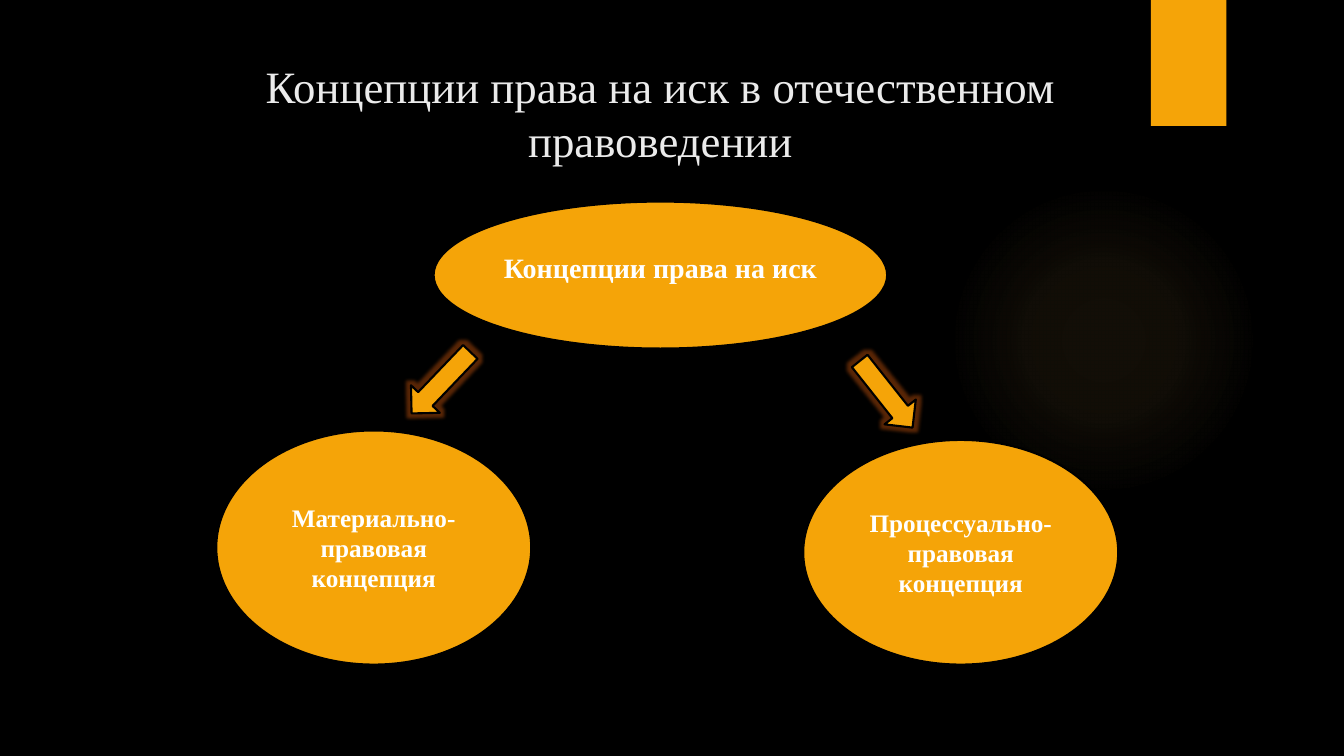
from lxml import etree
from pptx import Presentation
from pptx.dml.color import RGBColor
from pptx.enum.shapes import MSO_SHAPE
from pptx.enum.text import MSO_ANCHOR, MSO_AUTO_SIZE, PP_ALIGN
from pptx.oxml import parse_xml
from pptx.oxml.ns import qn
from pptx.util import Pt

ELLIPSE, RECT, ARROW = MSO_SHAPE.OVAL, MSO_SHAPE.RECTANGLE, MSO_SHAPE.DOWN_ARROW
TOP, MIDDLE = MSO_ANCHOR.TOP, MSO_ANCHOR.MIDDLE
CENTER, NO_FIT = PP_ALIGN.CENTER, MSO_AUTO_SIZE.NONE
EMU_PER_PX = 9525
TITLE_ONLY = 5
DRAWING_NS = "http://schemas.openxmlformats.org/drawingml/2006/main"


def px(*lengths):
    return [n * EMU_PER_PX for n in lengths]


def rgb(value):
    return RGBColor.from_string(value)


class ConceptSlide:
    font = "Times New Roman"
    black, white, pale = "000000", "FFFFFF", "EBEBEB"
    amber, light_amber, ember = "F5A408", "FAC96A", "E06010"

    def __init__(self, prs):
        self.s = prs.slides.add_slide(prs.slide_layouts[TITLE_ONLY])
        self.s.background.fill.solid()
        self.s.background.fill.fore_color.rgb = rgb(self.black)

    def set_text(self, sp, text, size, color, bold, anchor, wrap=True):
        tf = sp.text_frame
        tf.text = text
        tf.word_wrap = wrap
        tf.auto_size = NO_FIT
        tf.vertical_anchor = anchor
        p = tf.paragraphs[0]
        p.alignment = CENTER
        font = p.runs[0].font
        font.name, font.size, font.bold = self.font, Pt(size), bold
        font.color.rgb = rgb(color)

    def title(self, text, box):
        sp = self.s.shapes.title
        sp.left, sp.top, sp.width, sp.height = px(*box)
        self.set_text(sp, text, 32, self.pale, False, TOP)

    def label(self, text, box):
        sp = self.s.shapes.add_textbox(*px(*box))
        self.set_text(sp, text, 20, self.white, True, TOP, wrap=False)

    def shape(self, kind, box, outlined=True):
        sp = self.s.shapes.add_shape(kind, *px(*box))
        sp.shadow.inherit = False
        sp.fill.solid()
        sp.fill.fore_color.rgb = rgb(self.amber)
        if outlined:
            sp.line.color.rgb = rgb(self.black)
            sp.line.width = Pt(1.5)
        else:
            sp.line.fill.background()
        return sp

    def concept(self, text, box):
        self.set_text(self.shape(ELLIPSE, box), text, 18, self.white, True, MIDDLE)

    def arrow(self, box, angle):
        sp = self.shape(ARROW, box)
        sp.rotation = angle
        effects = sp._element.spPr.find(qn("a:effectLst"))
        glow = etree.SubElement(effects, qn("a:glow"), rad=str(px(7)[0]))
        color = etree.SubElement(glow, qn("a:srgbClr"), val=self.ember)
        etree.SubElement(color, qn("a:alpha"), val="40000")

    def halo(self, box, stops):
        sp = self.shape(ELLIPSE, box, outlined=False)
        marks = "".join(
            f'<a:gs pos="{pos * 1000}"><a:srgbClr val="{self.light_amber}">'
            f'<a:alpha val="{alpha * 1000}"/></a:srgbClr></a:gs>'
            for pos, alpha in stops
        )
        grad = parse_xml(
            f'<a:gradFill xmlns:a="{DRAWING_NS}"><a:gsLst>{marks}</a:gsLst>'
            '<a:path path="circle"><a:fillToRect l="50000" t="50000" '
            'r="50000" b="50000"/></a:path></a:gradFill>'
        )
        spPr = sp._element.spPr
        spPr.replace(spPr.find(qn("a:solidFill")), grad)


def main():
    prs = Presentation()
    prs.slide_width, prs.slide_height = px(1280, 720)
    slide = ConceptSlide(prs)
    slide.halo((903, 176, 296, 296), [(0, 7), (36, 6), (69, 0), (100, 0)])
    slide.shape(RECT, (1096, 0, 72, 120), outlined=False)
    slide.title("Концепции права на иск в отечественном правоведении",
                (192, 51, 874, 113))
    slide.shape(ELLIPSE, (413, 192, 432, 140))
    slide.label("Концепции права на иск", (469, 234, 320, 42))
    slide.concept("Материально-правовая концепция", (206, 410, 300, 223))
    slide.concept("Процессуально-правовая концепция", (765, 419, 300, 214))
    slide.arrow((401, 324, 38, 81), 43.7)
    slide.arrow((825, 335, 38, 81), 321.6)
    prs.save("out.pptx")


if __name__ == "__main__":
    main()
